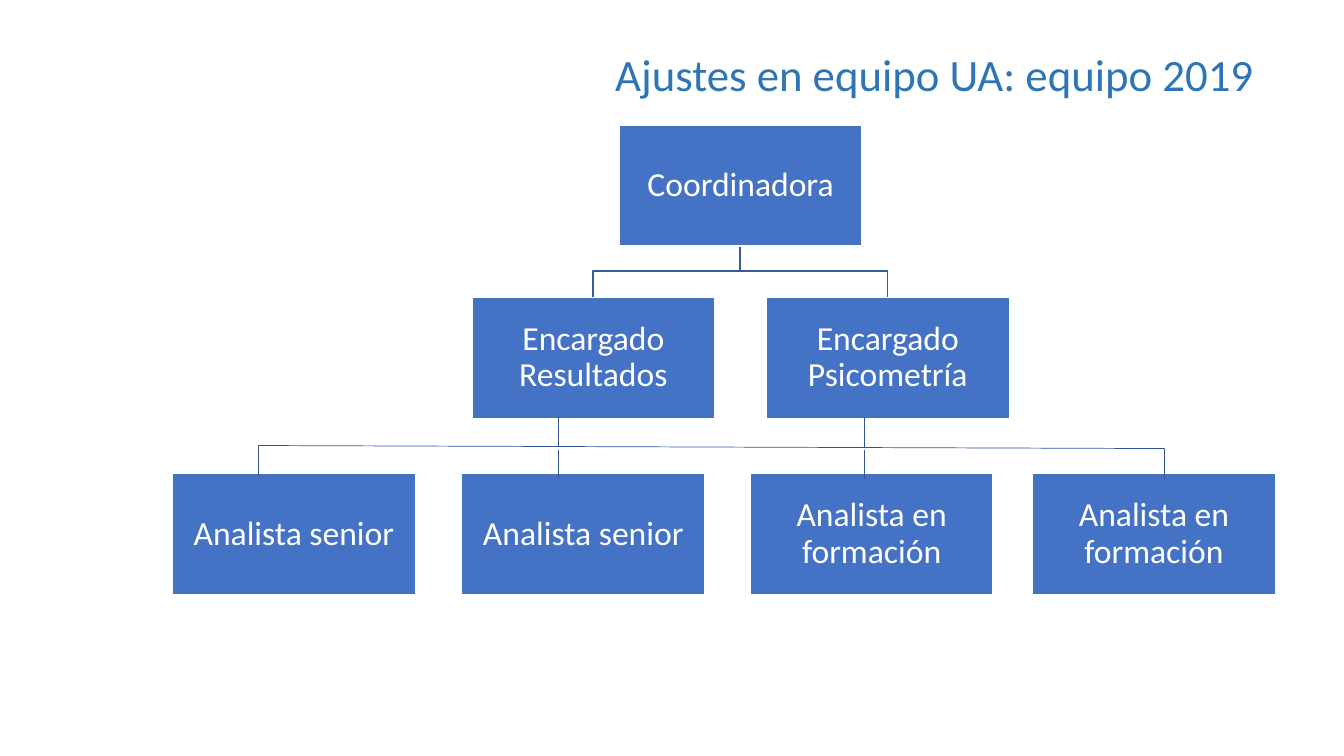
from lxml.etree import SubElement
from pptx import Presentation
from pptx.dml.color import RGBColor
from pptx.enum.shapes import MSO_CONNECTOR, MSO_SHAPE
from pptx.enum.text import MSO_ANCHOR, PP_ALIGN
from pptx.oxml.ns import qn
from pptx.util import Pt

PX = 9144  # EMU per px, 100 px to the inch
FONT = "Calibri"
COLORS = {"title": "2E75B6", "box": "4472C4", "white": "FFFFFF",
          "bracket": "365B9D", "line": "2F5597"}
BOX_W, BOX_H = 241, 120
TOP_Y, MIDDLE_Y, BOTTOM_Y = 124, 295, 470
COORDINATOR = (614, "Coordinadora")
MANAGERS = [(468, "Encargado Resultados"), (760, "Encargado Psicometría")]
ANALYSTS = [(171, "Analista senior"), (458, "Analista senior"),
            (744, "Analista en formación"), (1024, "Analista en formación")]
# Crossbar, drops to the analysts, then stems from the managers
LINES = [(256, 442, 1155, 445),
         (256, 442, 256, 472), (554, 446, 554, 475),
         (857, 446, 857, 475), (1155, 445, 1155, 475),
         (554, 413, 554, 443), (857, 414, 857, 444)]


def color(name):
    return RGBColor.from_string(COLORS[name])


def format_text(tf, size, color_name, align):
    p = tf.paragraphs[0]
    p.alignment = align
    p.line_spacing = 0.9
    p.font.name = FONT
    p.font.size = Pt(size)
    p.font.color.rgb = color(color_name)


def set_line(shape, color_name, width):
    shape.line.color.rgb = color(color_name)
    shape.line.width = Pt(width)


def add_title(s, text):
    title = s.shapes.title
    title.left, title.top, title.width, title.height = (
        v * PX for v in (171, 44, 1083, 65))
    tf = title.text_frame
    tf.text = text
    tf.vertical_anchor = MSO_ANCHOR.MIDDLE
    format_text(tf, 32, "title", PP_ALIGN.RIGHT)


def add_box(s, x, y, text):
    box = s.shapes.add_shape(MSO_SHAPE.RECTANGLE, x * PX, y * PX,
                             BOX_W * PX, BOX_H * PX)
    box.shadow.inherit = False
    box.fill.solid()
    box.fill.fore_color.rgb = color("box")
    set_line(box, "white", 1)
    tf = box.text_frame
    tf.word_wrap = True
    tf.margin_left = tf.margin_right = 2 * PX
    tf.margin_top = tf.margin_bottom = 2 * PX
    tf.vertical_anchor = MSO_ANCHOR.MIDDLE
    tf.text = text
    format_text(tf, 24, "white", PP_ALIGN.CENTER)


def add_bracket(s, x1, y1, x2, y2):
    """Draw a stepped branch that turns halfway down."""
    mid = (y1 + y2) // 2
    builder = s.shapes.build_freeform(x1, y1, scale=PX)
    builder.add_line_segments([(x1, mid), (x2, mid), (x2, y2)], close=False)
    bracket = builder.convert_to_shape()
    bracket.shadow.inherit = False
    bracket.fill.background()
    set_line(bracket, "bracket", 1)


def add_line(s, *ends):
    line = s.shapes.add_connector(MSO_CONNECTOR.STRAIGHT,
                                  *(v * PX for v in ends))
    set_line(line, "line", 0.5)
    SubElement(line._element.spPr, qn("a:effectLst"))


def main():
    prs = Presentation()
    prs.slide_width, prs.slide_height = 1333 * PX, 750 * PX
    s = prs.slides.add_slide(prs.slide_layouts[5])
    add_title(s, "Ajustes en equipo UA: equipo 2019")

    top_x, top_text = COORDINATOR
    half = BOX_W // 2
    for x, _ in MANAGERS:
        add_bracket(s, top_x + half, TOP_Y + BOX_H, x + half, MIDDLE_Y)
    add_box(s, top_x, TOP_Y, top_text)
    for y, row in ((MIDDLE_Y, MANAGERS), (BOTTOM_Y, ANALYSTS)):
        for x, text in row:
            add_box(s, x, y, text)
    for ends in LINES:
        add_line(s, *ends)
    prs.save("out.pptx")


if __name__ == "__main__":
    main()
